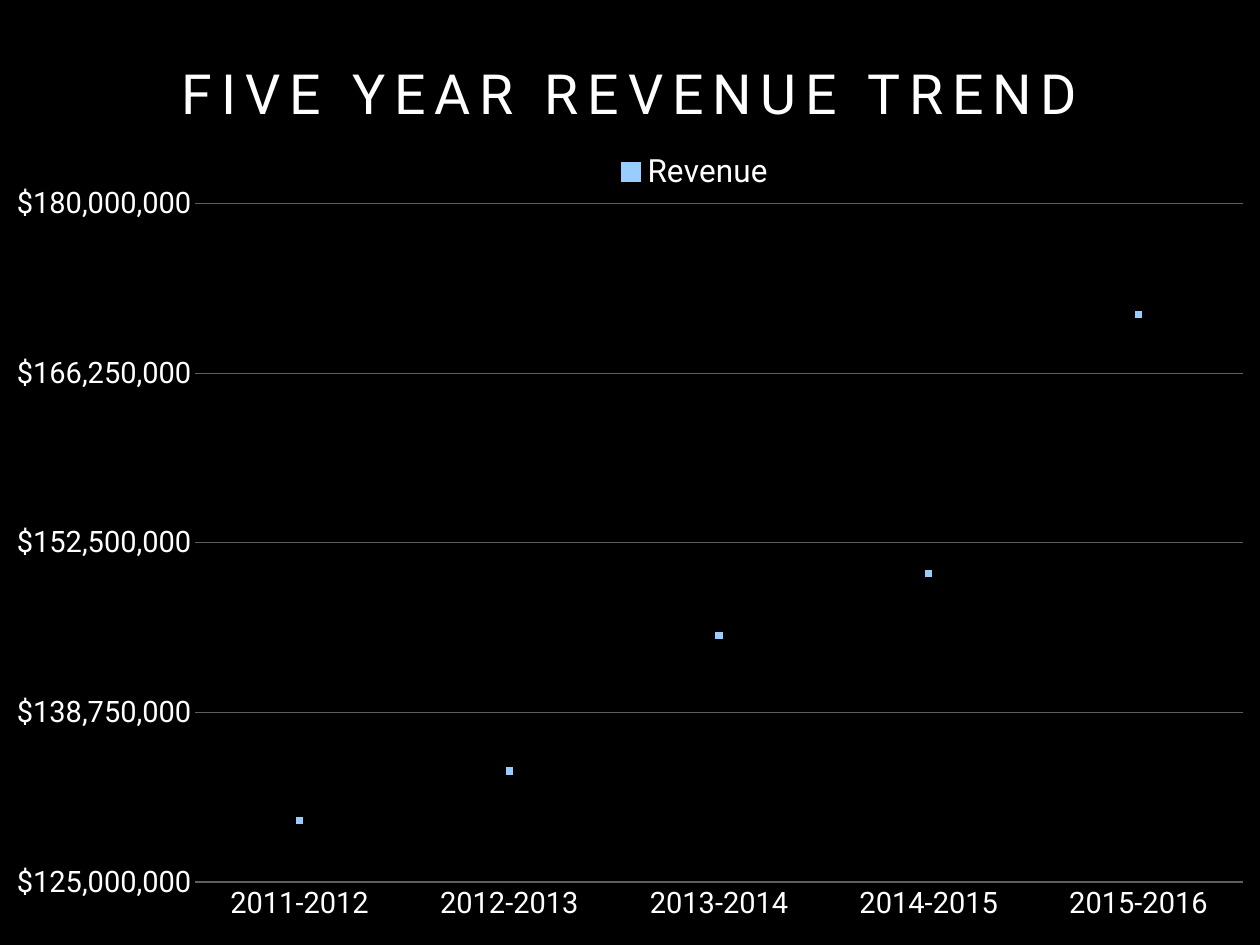
import pptx
import pptx.util
import pptx.chart.data
import pptx.dml.color
import pptx.enum.chart
import pptx.enum.text
import pptx.oxml
import pptx.oxml.ns
from dataclasses import dataclass
from pptx.util import Cm, Pt


@dataclass(frozen=True)
class Theme:
    font: str = "Roboto"
    background: str = "000000"
    text: str = "FFFFFF"
    grid: str = "5E5E5E"
    marker: str = "99CCFF"
    title_size: int = 45
    axis_size: int = 24
    legend_size: int = 26


THEME = Theme()
REVENUE = {
    "2011-2012": 130_000_000,
    "2012-2013": 134_000_000,
    "2013-2014": 145_000_000,
    "2014-2015": 150_000_000,
    "2015-2016": 171_000_000,
}


def rgb(color):
    return pptx.dml.color.RGBColor.from_string(color)


def style_font(font, size):
    font.name = THEME.font
    font.size = Pt(size)
    font.bold = False
    font.color.rgb = rgb(THEME.text)


def add_title(s, text):
    sp = s.shapes.add_textbox(Cm(1.83), Cm(1.7), Cm(32.46), Cm(3.96))
    tf = sp.text_frame
    tf.word_wrap = True
    tf.margin_left = tf.margin_right = tf.margin_top = tf.margin_bottom = 0
    p = tf.paragraphs[0]
    p.alignment = pptx.enum.text.PP_ALIGN.CENTER
    r = p.add_run()
    r.text = text
    style_font(r.font, THEME.title_size)
    r.font._element.set("spc", "720")


def set_layout(parent, before, x, y, w, h, inner=False):
    """Place a chart part by fractions of the chart area, ahead of the child named before."""
    for old in parent.findall(pptx.oxml.ns.qn("c:layout")):
        parent.remove(old)
    target = '<c:layoutTarget val="inner"/>' if inner else ""
    layout = pptx.oxml.parse_xml(
        f'<c:layout {pptx.oxml.ns.nsdecls("c")}><c:manualLayout>{target}'
        '<c:xMode val="edge"/><c:yMode val="edge"/>'
        f'<c:x val="{x}"/><c:y val="{y}"/><c:w val="{w}"/><c:h val="{h}"/>'
        "</c:manualLayout></c:layout>")
    parent.find(pptx.oxml.ns.qn(before)).addprevious(layout)


def style_axis(axis):
    axis.major_tick_mark = axis.minor_tick_mark = pptx.enum.chart.XL_TICK_MARK.NONE
    axis.format.line.fill.background()
    style_font(axis.tick_labels.font, THEME.axis_size)


def style_value_axis(axis):
    style_axis(axis)
    axis.minimum_scale = 125_000_000
    axis.maximum_scale = 180_000_000
    axis.major_unit = 13_750_000
    axis.tick_labels.number_format = '"$"#,##0'
    axis.tick_labels.number_format_is_linked = False
    axis.has_major_gridlines = True
    line = axis.major_gridlines.format.line
    line.color.rgb = rgb(THEME.grid)
    line.width = Pt(1)


def style_series(series):
    series.smooth = False
    series.format.line.fill.background()
    marker = series.marker
    marker.style = pptx.enum.chart.XL_MARKER_STYLE.SQUARE
    marker.size = 5
    marker.format.fill.solid()
    marker.format.fill.fore_color.rgb = rgb(THEME.marker)
    marker.format.line.fill.background()


def add_legend(chart):
    chart.has_legend = True
    legend = chart.legend
    legend.position = pptx.enum.chart.XL_LEGEND_POSITION.TOP
    legend.include_in_layout = False
    style_font(legend.font, THEME.legend_size)
    set_layout(legend._element, "c:overlay", 0.48, 0.01, 0.13, 0.06)


def add_revenue_chart(s):
    data = pptx.chart.data.CategoryChartData()
    data.categories = list(REVENUE)
    data.add_series("Revenue", list(REVENUE.values()))
    chart = s.shapes.add_chart(
        pptx.enum.chart.XL_CHART_TYPE.LINE_MARKERS,
        Cm(0.48), Cm(4.01), Cm(35.18), Cm(22.89), data).chart
    chart.has_title = False
    style_font(chart.font, THEME.axis_size)
    chart.plots[0].vary_by_categories = False
    style_axis(chart.category_axis)
    style_value_axis(chart.value_axis)
    style_series(chart.plots[0].series[0])
    add_legend(chart)
    plot_area = chart._chartSpace.chart.plotArea
    set_layout(plot_area, "c:lineChart", 0.13, 0.08, 0.87, 0.85, inner=True)


def main():
    prs = pptx.Presentation()
    prs.slide_width, prs.slide_height = Cm(36.12), Cm(27.1)
    s = prs.slides.add_slide(prs.slide_layouts[6])
    s.background.fill.solid()
    s.background.fill.fore_color.rgb = rgb(THEME.background)
    add_title(s, "FIVE YEAR REVENUE TREND")
    add_revenue_chart(s)
    prs.save("out.pptx")


if __name__ == "__main__":
    main()
